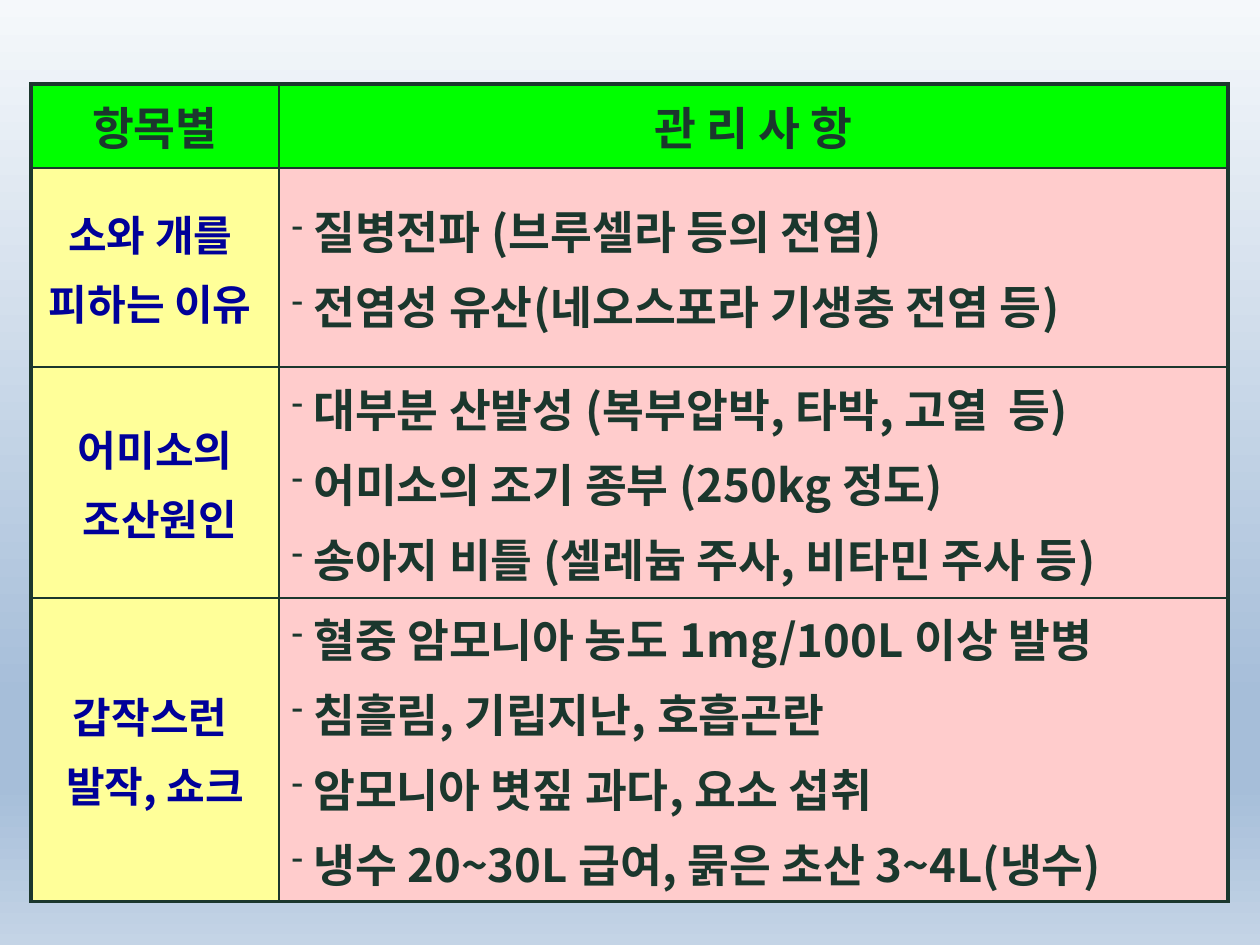
import lxml.etree
import pptx
import pptx.dml.color
import pptx.enum.text
import pptx.oxml.ns
import pptx.util

PX = 914400 // 126
qn = pptx.oxml.ns.qn
RGB = pptx.dml.color.RGBColor.from_string

theme = {
    "font": "Noto Sans CJK KR",
    "ink": "1B372D",
    "header": {"fill": "00FF00", "color": "1B372D", "size": 26},
    "topic": {"fill": "FFFF99", "color": "000099", "size": 24},
    "care": {"fill": "FFCCCC", "color": "1B372D", "size": 26},
    "sky": [(0, "F5F8FB"), (74, "A6BED9"), (83, "A6BED9"), (100, "C4D4E6")],
    "outer": 2.25,
    "inner": 1,
}

care_guide = [
    (["항목별"], ["관 리 사 항"]),
    (["소와 개를 ", "피하는 이유 "],
     [" 질병전파 (브루셀라 등의 전염)", " 전염성 유산(네오스포라 기생충 전염 등)"]),
    (["어미소의", " 조산원인"],
     [" 대부분 산발성 (복부압박, 타박, 고열  등)",
      " 어미소의 조기 종부 (250kg 정도)",
      " 송아지 비틀 (셀레늄 주사, 비타민 주사 등)"]),
    (["갑작스런 ", "발작, 쇼크"],
     [" 혈중 암모니아 농도 1mg/100L 이상 발병",
      " 침흘림, 기립지난, 호흡곤란",
      " 암모니아 볏짚 과다, 요소 섭취",
      " 냉수 20~30L 급여, 묽은 초산 3~4L(냉수)"]),
]
column_widths = [248, 949]
row_heights = [84, 199, 231, 294]


def add_child(parent, tag, **attributes):
    return lxml.etree.SubElement(parent, qn(tag), attributes)


def draw_border(cell, position, side, width):
    line = lxml.etree.Element(qn(f"a:ln{side}"), {"w": str(pptx.util.Pt(width))})
    add_child(add_child(line, "a:solidFill"), "a:srgbClr", val=theme["ink"])
    cell._tc.get_or_add_tcPr().insert(position, line)


deck = pptx.Presentation()
deck.slide_width = pptx.util.Inches(10)
deck.slide_height = pptx.util.Inches(7.5)
slide = deck.slides.add_slide(deck.slide_layouts[6])

sky = slide.background.fill
sky.gradient()
sky.gradient_angle = 270
sky_stops = slide.element.find(".//" + qn("a:gsLst"))
for stop in list(sky_stops):
    sky_stops.remove(stop)
for percent, color in theme["sky"]:
    add_child(add_child(sky_stops, "a:gs", pos=str(percent * 1000)), "a:srgbClr", val=color)

guide = slide.shapes.add_table(
    len(row_heights), len(column_widths), 31 * PX, 84 * PX,
    sum(column_widths) * PX, sum(row_heights) * PX).table
guide.first_row = False
guide.horz_banding = False
for column, width in zip(guide.columns, column_widths):
    column.width = width * PX
for row, height in zip(guide.rows, row_heights):
    row.height = height * PX

for r, entry in enumerate(care_guide):
    for c, lines in enumerate(entry):
        role = "header" if r == 0 else ("topic", "care")[c]
        look = theme[role]
        cell = guide.cell(r, c)
        cell.vertical_anchor = pptx.enum.text.MSO_ANCHOR.MIDDLE
        cell.fill.solid()
        cell.fill.fore_color.rgb = RGB(look["fill"])
        edges = {"L": c == 0, "R": c == len(column_widths) - 1,
                 "T": r == 0, "B": r == len(row_heights) - 1}
        for position, (side, is_outer) in enumerate(edges.items()):
            draw_border(cell, position, side, theme["outer" if is_outer else "inner"])

        font_format = {"size": pptx.util.Pt(look["size"]), "bold": True, "name": theme["font"]}
        for i, line in enumerate(lines):
            paragraph = cell.text_frame.paragraphs[0] if i == 0 else cell.text_frame.add_paragraph()
            if role == "care":
                properties = paragraph._p.get_or_add_pPr()
                add_child(properties, "a:buSzPct", val="75000")
                add_child(properties, "a:buChar", char="-")
            else:
                paragraph.alignment = pptx.enum.text.PP_ALIGN.CENTER
            if i > 0:
                paragraph.space_before = pptx.util.Pt(look["size"] * 0.2)
            run = paragraph.add_run()
            run.text = line
            for name, value in font_format.items():
                setattr(run.font, name, value)
            run.font.color.rgb = RGB(look["color"])
            add_child(run._r.get_or_add_rPr(), "a:ea", typeface=theme["font"])

deck.save("out.pptx")
